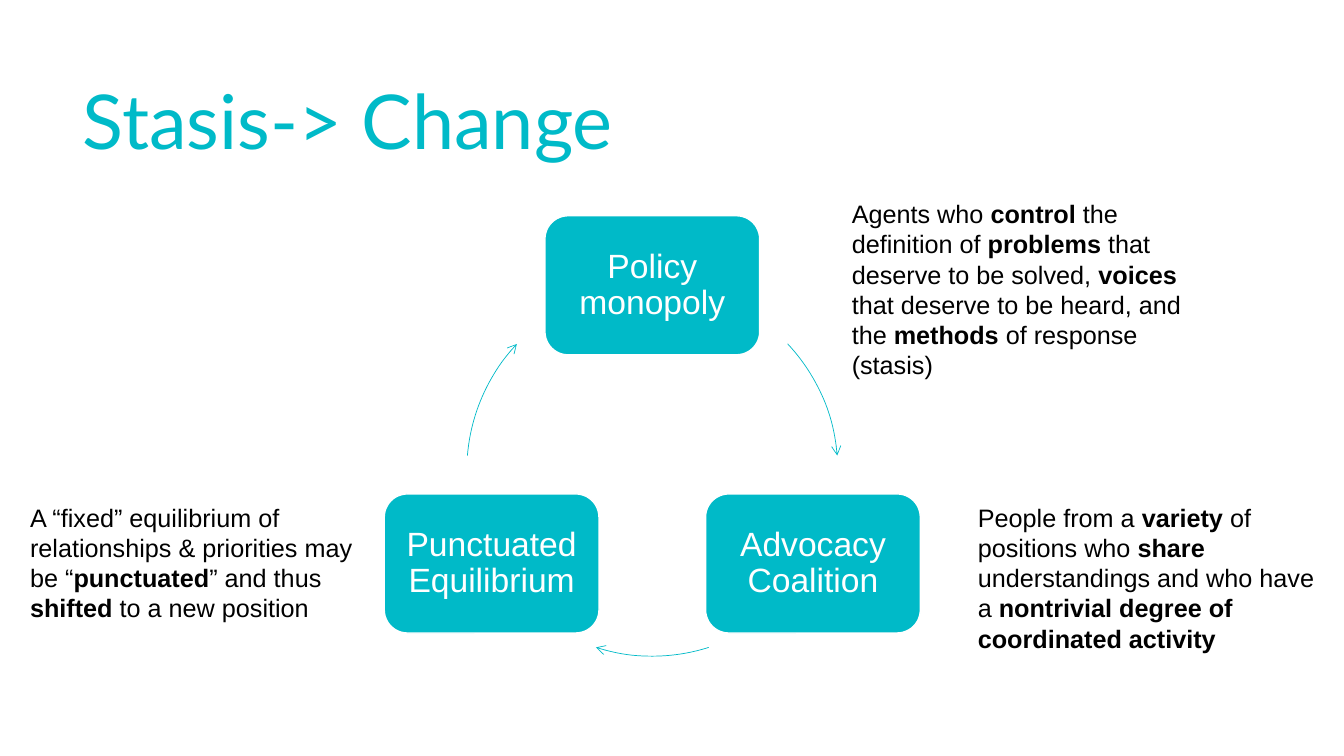
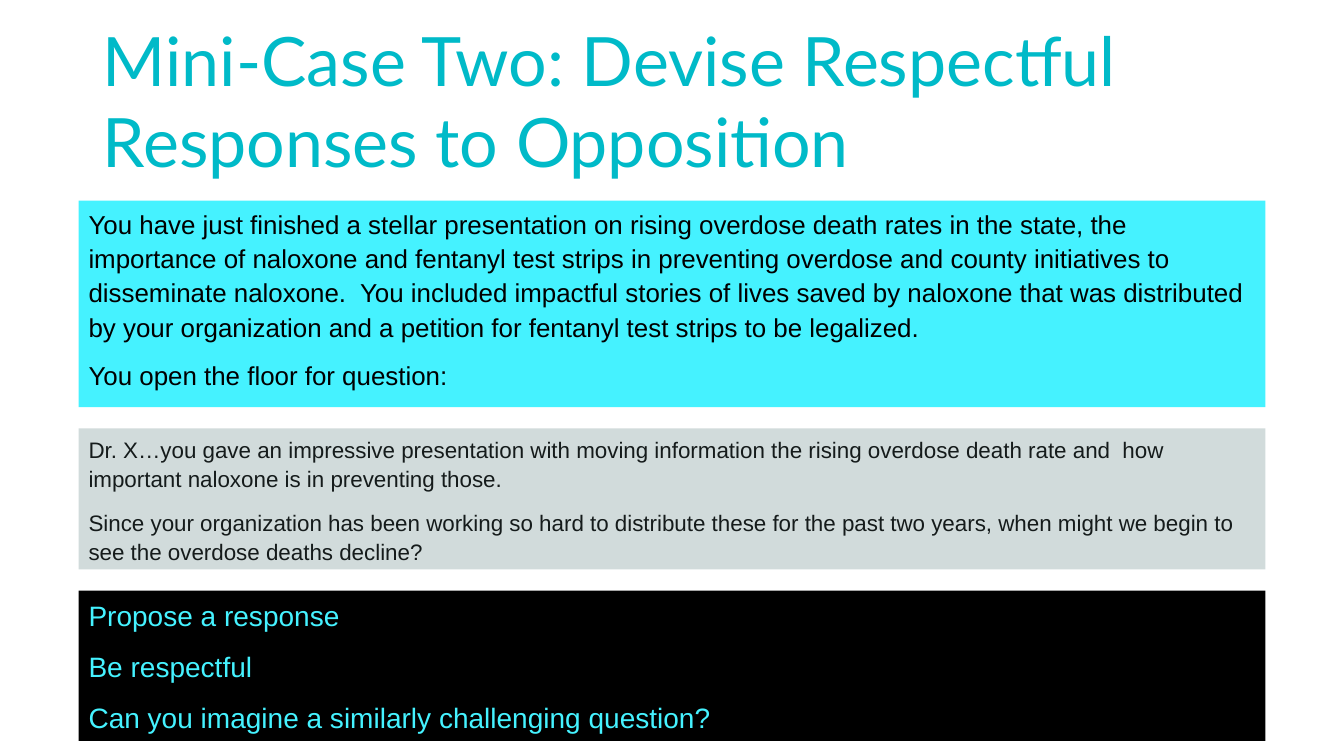
from math import cos, radians, sin

from lxml.etree import SubElement
from pptx import Presentation
from pptx.dml.color import RGBColor
from pptx.enum.shapes import MSO_SHAPE as Preset
from pptx.enum.text import MSO_ANCHOR as Anchor, MSO_AUTO_SIZE as AutoSize, PP_ALIGN as Align
from pptx.oxml.ns import qn
from pptx.util import Inches, Pt

TEAL, CYAN, GREY = "00BAC8", "45F2FF", "D1DBDB"
WHITE, BLACK, INK = "FFFFFF", "000000", "151B1B"
TITLE_FONT, BODY_FONT = "Lato", "Arial"

# Cycle: nodes sit on a circle, angles run clockwise from three o'clock
CENTRE_X, CENTRE_Y, RADIUS = 6.47, 4.67, 1.84
NODE_WIDTH, NODE_HEIGHT = 2.13, 1.38
NODES = [("Policy monopoly", -90), ("Advocacy Coalition", 30), ("Punctuated Equilibrium", 150)]
ARROWS = [(-43.2, -4.7), (72.3, 107.7), (184.7, 223.1)]

# Text between ** marks is bold
NOTES = [
    (9.6, 4.93, 3.55, 1.62,
     "People from a **variety** of positions who **share** understandings and who have a "
     "**nontrivial degree of coordinated activity**"),
    (8.35, 1.92, 3.8, 1.92,
     "Agents who **control** the definition of **problems **that deserve to be solved, "
     "**voices** that deserve to be heard, and the **methods **of response (stasis)"),
    (0.2, 4.93, 3.55, 1.31,
     "A “fixed” equilibrium of relationships & priorities may be “**punctuated**” and thus "
     "**shifted** to a new position"),
]

PANEL_LEFT, PANEL_TOP, PANEL_WIDTH, PANEL_GAP = 0.78, 1.99, 11.77, 0.21
PANELS = [
    (2.05, CYAN, BLACK, 18.5, [
        "You have just finished a stellar presentation on rising overdose death rates in the "
        "state, the importance of naloxone and fentanyl test strips in preventing overdose and "
        "county initiatives to disseminate naloxone.  You included impactful stories of lives "
        "saved by naloxone that was distributed by your organization and a petition for "
        "fentanyl test strips to be legalized.",
        "You open the floor for question:"]),
    (1.4, GREY, INK, 16, [
        "Dr. X…you gave an impressive presentation with moving information the rising overdose "
        "death rate and  how important naloxone is in preventing those.",
        "Since your organization has been working so hard to distribute these for the past two "
        "years, when might we begin to see the overdose deaths decline?"]),
    (1.49, BLACK, CYAN, 20, [
        "Propose a response",
        "Be respectful",
        "Can you imagine a similarly challenging question?"]),
]


def rgb(value):
    return RGBColor.from_string(value)


def style(para, size, color, name=BODY_FONT, align=Align.LEFT):
    para.alignment = align
    para.font.name = name
    para.font.size = Pt(size)
    para.font.color.rgb = rgb(color)


def add_page(deck, title, left, top, size):
    page = deck.slides.add_slide(deck.slide_layouts[5])
    box = page.shapes.title
    box.left, box.top, box.width, box.height = map(Inches, (left, top, 11.5, 1.45))
    frame = box.text_frame
    frame.text = title
    frame.auto_size = AutoSize.NONE
    frame.vertical_anchor = Anchor.BOTTOM
    style(frame.paragraphs[0], size, TEAL, TITLE_FONT)
    return page


def add_preset(page, preset, left, top, width, height, fill=None, line=None, weight=1):
    shape = page.shapes.add_shape(preset, *map(Inches, (left, top, width, height)))
    shape.shadow.inherit = False
    if fill:
        shape.fill.solid()
        shape.fill.fore_color.rgb = rgb(fill)
    else:
        shape.fill.background()
    if line:
        shape.line.color.rgb = rgb(line)
        shape.line.width = Pt(weight)
    else:
        shape.line.fill.background()
    return shape


def add_node(page, text, angle):
    left = CENTRE_X + RADIUS * cos(radians(angle)) - NODE_WIDTH / 2
    top = CENTRE_Y + RADIUS * sin(radians(angle)) - NODE_HEIGHT / 2
    node = add_preset(page, Preset.ROUNDED_RECTANGLE, left, top, NODE_WIDTH, NODE_HEIGHT,
                      TEAL, WHITE)
    frame = node.text_frame
    # The rounded corners already inset the text area
    frame.margin_left = frame.margin_right = Inches(0.1)
    frame.vertical_anchor = Anchor.MIDDLE
    frame.text = text
    para = frame.paragraphs[0]
    para.line_spacing = 0.9
    style(para, 24, WHITE, align=Align.CENTER)


def add_arc_arrow(page, start, end):
    arc = add_preset(page, Preset.ARC, CENTRE_X - RADIUS, CENTRE_Y - RADIUS,
                     2 * RADIUS, 2 * RADIUS, line=TEAL, weight=0.5)
    for index, angle in enumerate((start, end)):
        # Angles are stored in 60000ths of a degree, adjustments in 100000ths
        arc.adjustments[index] = angle % 360 * 0.6
    SubElement(arc.element.spPr.get_or_add_ln(), qn("a:tailEnd"), type="arrow")


def add_note(page, left, top, width, height, text):
    box = page.shapes.add_textbox(*map(Inches, (left, top, width, height)))
    box.text_frame.word_wrap = True
    para = box.text_frame.paragraphs[0]
    style(para, 18, BLACK)
    for index, part in enumerate(text.split("**")):
        if part:
            span = para.add_run()
            span.text = part
            span.font.bold = index % 2 == 1


def add_panel(page, top, height, fill, color, size, lines):
    panel = add_preset(page, Preset.RECTANGLE, PANEL_LEFT, top, PANEL_WIDTH, height, fill)
    frame = panel.text_frame
    frame.vertical_anchor = Anchor.TOP
    frame.text = "\n".join(lines)
    for para in frame.paragraphs:
        para.line_spacing = 1.1
        para.space_before = Pt(10)
        style(para, size, color)


def build_cycle(deck):
    page = add_page(deck, "Stasis-> Change", 0.72, 0.23, 54)
    for node, arrow in zip(NODES, ARROWS):
        add_node(page, *node)
        add_arc_arrow(page, *arrow)
    for note in NOTES:
        add_note(page, *note)


def build_case(deck):
    page = add_page(deck, "Mini-Case Two: Devise Respectful Responses to Opposition",
                    0.92, 0.4, 48.6)
    top = PANEL_TOP
    for height, *look in PANELS:
        add_panel(page, top, height, *look)
        top += height + PANEL_GAP


def main():
    deck = Presentation()
    deck.slide_width, deck.slide_height = Inches(13.33), Inches(7.5)
    build_cycle(deck)
    build_case(deck)
    deck.save("out.pptx")


if __name__ == "__main__":
    main()
